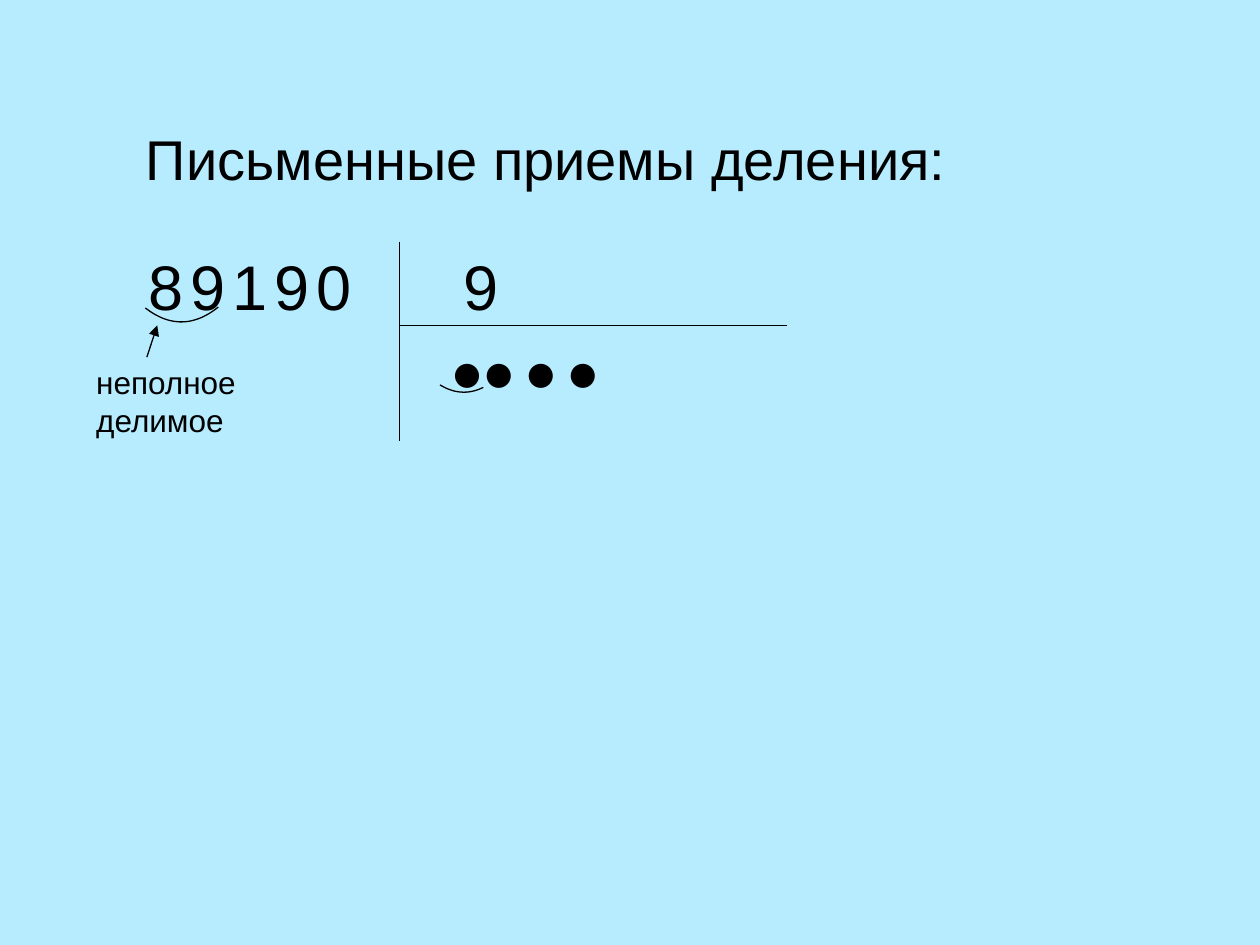
from math import cos, radians, sin

from lxml import etree
from pptx import Presentation
from pptx.dml.color import RGBColor
from pptx.enum.shapes import MSO_CONNECTOR
from pptx.enum.text import MSO_AUTO_SIZE, PP_ALIGN
from pptx.oxml.ns import qn
from pptx.util import Cm, Pt

SKY = RGBColor(0xB7, 0xEC, 0xFF)
BLACK = RGBColor(0, 0, 0)
STRAIGHT = MSO_CONNECTOR.STRAIGHT
CENTER, LEFT = PP_ALIGN.CENTER, PP_ALIGN.LEFT
GROW = MSO_AUTO_SIZE.SHAPE_TO_FIT_TEXT
LINE_WIDTH = Pt(0.75)
ARC_STEPS = 24
DIGIT_STEP = 2.54 / 3


def add_text(slide, text, left, top, width, height, *, size, font="Arial",
             align=LEFT, spacing=1.0):
    box = slide.shapes.add_textbox(Cm(left), Cm(top), Cm(width), Cm(height))
    frame = box.text_frame
    frame.word_wrap = True
    frame.auto_size = GROW
    paragraph = frame.paragraphs[0]
    paragraph.alignment = align
    paragraph.line_spacing = spacing
    paragraph.space_before = Pt(size / 12)
    run = paragraph.add_run()
    run.text = text
    run.font.size = Pt(size)
    run.font.name = font
    run.font.color.rgb = BLACK


def add_line(slide, start, end, arrow=False):
    line = slide.shapes.add_connector(STRAIGHT, *map(Cm, start + end))
    line.line.color.rgb = BLACK
    line.line.width = LINE_WIDTH
    if arrow:
        outline = line.line._get_or_add_ln()
        etree.SubElement(outline, qn("a:tailEnd"), type="triangle")
    etree.SubElement(line._element.spPr, qn("a:effectLst"))


def add_arc(slide, start, end, depth, pivot, center, angle):
    """Hang a shallow arc below the chord, in a frame turned about center."""
    turn = radians(angle)

    def unturned(x, y):
        dx, dy = x - center[0], y - center[1]
        return (Cm(center[0] + dx * cos(turn) + dy * sin(turn)),
                Cm(center[1] - dx * sin(turn) + dy * cos(turn)))

    points = []
    for step in range(ARC_STEPS + 1):
        t = step / ARC_STEPS
        x = start[0] + (end[0] - start[0]) * t
        y = start[1] + (end[1] - start[1]) * t + 4 * depth * t * (1 - t)
        points.append(unturned(x, y))
    # The pivot of the arc belongs to its frame but carries no stroke
    builder = slide.shapes.build_freeform(*unturned(*pivot))
    builder.move_to(*points[0])
    builder.add_line_segments(points[1:], close=False)
    arc = builder.convert_to_shape()
    arc.rotation = angle
    arc.fill.background()
    arc.line.color.rgb = BLACK
    arc.line.width = LINE_WIDTH
    arc.shadow.inherit = False


def add_quotient_dot(slide, left):
    add_text(slide, "●", left, 7, 0.85, 1.02, size=18, font="Montserrat")


def main():
    prs = Presentation()
    prs.slide_width, prs.slide_height = Cm(25.4), Cm(19.05)
    slide = prs.slides.add_slide(prs.slide_layouts[6])
    slide.background.fill.solid()
    slide.background.fill.fore_color.rgb = SKY

    # Heading
    add_text(slide, "Письменные приемы деления:", 1.06, 2.54, 19.9, 1.48,
             size=32, align=CENTER, spacing=0.9)

    # Division corner and divisor
    add_line(slide, (8.05, 4.87), (8.05, 8.89))
    add_line(slide, (15.87, 6.56), (8.05, 6.56))
    add_text(slide, "9", 9.1, 4.87, 2.12, 1.78, size=36)

    # Incomplete dividend
    add_arc(slide, (2.94, 6.19), (4.41, 6.17), 0.29,
            pivot=(3.66, 5.38), center=(3.61, 6.07), angle=58.4)
    add_text(slide, "неполное делимое", 1.69, 7.2, 3.6, 1.78, size=18)
    add_line(slide, (2.96, 7.2), (3.17, 6.56), arrow=True)

    # First quotient digit
    add_quotient_dot(slide, 8.89)
    add_arc(slide, (8.87, 7.77), (9.74, 7.82), 0.12,
            pivot=(9.32, 7.04), center=(9.3, 7.63), angle=47)

    # Dividend digits: place, digit, box width
    dividend = ((4, "0", 0.85), (2, "1", 1.06), (0, "8", 1.27),
                (1, "9", 1.06), (3, "9", 0.85))
    for place, digit, width in dividend:
        add_text(slide, digit, 2.75 + place * DIGIT_STEP, 4.87, width, 1.78,
                 size=36)

    # Remaining quotient digits
    for place in range(3):
        add_quotient_dot(slide, 9.53 + place * DIGIT_STEP)

    prs.save("out.pptx")


if __name__ == "__main__":
    main()
